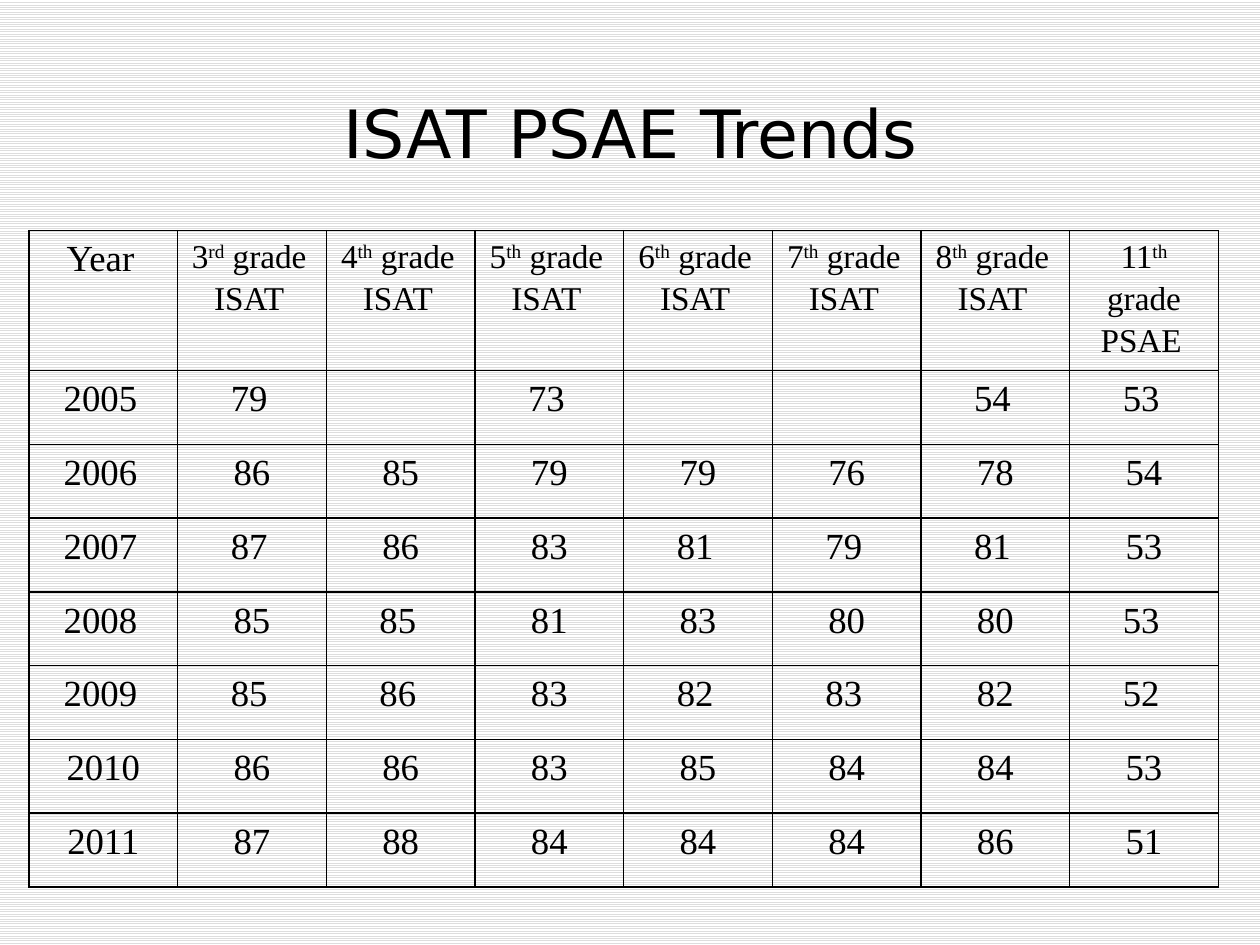
from lxml.etree import SubElement
from pptx import Presentation
from pptx.dml.color import RGBColor
from pptx.enum.dml import MSO_PATTERN
from pptx.enum.text import MSO_ANCHOR, PP_ALIGN
from pptx.oxml import parse_xml
from pptx.oxml.ns import nsdecls, qn
from pptx.util import Inches, Pt

BLACK = "000000"
SERIF = "Times New Roman"
HEADER_SHARE = 0.18
GRADES = [("3", "rd"), ("4", "th"), ("5", "th"), ("6", "th"), ("7", "th"), ("8", "th")]
SCORES = [
    ["2005 ", "79 ", "", "73 ", "", "", "54 ", "53 "],
    ["2006 ", "86", "85", "79", "79", "76", "78", "54"],
    ["2007 ", "87 ", "86", "83", "81 ", "79 ", "81 ", "53"],
    ["2008 ", "85", "85 ", "81", "83", "80", "80", "53 "],
    ["2009 ", "85 ", "86 ", "83", "82 ", "83 ", "82", "52 "],
    ["2010", "86", "86", "83", "85", "84", "84", "53"],
    ["2011", "87", "88", "84", "84", "84", "86", "51"],
]


def color(value):
    return RGBColor.from_string(value)


def style(para, font, size):
    para.alignment = PP_ALIGN.CENTER
    para.font.name = font
    para.font.size = Pt(size)
    para.font.color.rgb = color(BLACK)


def add_span(para, text, size, raised=False):
    span = para.add_run()
    span.text = text
    span.font.size = Pt(size)
    if raised:
        span._r.get_or_add_rPr().set("baseline", "30000")


def write_line(para, text, size, ordinal=None):
    style(para, SERIF, size)
    para.line_spacing = 1.15
    if ordinal:
        number, suffix = ordinal
        add_span(para, number, size)
        add_span(para, suffix, size, raised=True)
    if text:
        add_span(para, text.rstrip(), size)
    if text.endswith(" "):
        add_span(para, " ", 13)


def frame_cell(cell):
    cell.fill.background()
    cell.margin_left = cell.margin_right = Inches(0.08)
    cell.margin_top, cell.margin_bottom = Inches(0.02), 0
    properties = cell._tc.get_or_add_tcPr()
    for index, side in enumerate(("lnL", "lnR", "lnT", "lnB")):
        line = parse_xml(f'<a:{side} {nsdecls("a")} w="{Pt(1)}"/>')
        fill = SubElement(line, qn("a:solidFill"))
        SubElement(fill, qn("a:srgbClr")).set("val", BLACK)
        properties.insert(index, line)


def add_title(page, left, top, width, height):
    box = page.shapes.add_textbox(left, top, width, height)
    frame = box.text_frame
    frame.word_wrap = True
    frame.vertical_anchor = MSO_ANCHOR.BOTTOM
    para = frame.paragraphs[0]
    para.text = "ISAT PSAE Trends"
    style(para, "DejaVu Sans", 38)


def write_header(cells):
    write_line(cells[0].text_frame.paragraphs[0], "Year ", 21)
    for cell, grade in zip(cells[1:], GRADES):
        frame = cell.text_frame
        write_line(frame.paragraphs[0], " grade ", 19, grade)
        write_line(frame.add_paragraph(), "ISAT ", 19)
    write_line(cells[-1].text_frame.paragraphs[0], " grade PSAE ", 19, ("11", "th"))


def add_score_table(page, left, top, width, height):
    row_count, column_count = len(SCORES) + 1, len(SCORES[0])
    table = page.shapes.add_table(
        row_count, column_count, left, top, width, height
    ).table
    table.first_row = table.horz_banding = False
    header_height = int(height * HEADER_SHARE)
    for index, row in enumerate(table.rows):
        row.height = (height - header_height) // len(SCORES) if index else header_height
    for cell in table.iter_cells():
        frame_cell(cell)
    write_header(list(table.rows[0].cells))
    for row, scores in zip(list(table.rows)[1:], SCORES):
        for cell, score in zip(row.cells, scores):
            write_line(cell.text_frame.paragraphs[0], score, 21)


def main():
    deck = Presentation()
    deck.slide_width, deck.slide_height = Inches(10), Inches(7.5)
    page = deck.slides.add_slide(deck.slide_layouts[6])
    backdrop = page.background.fill
    backdrop.patterned()
    backdrop.pattern = MSO_PATTERN.LIGHT_HORIZONTAL
    backdrop.fore_color.rgb = color("DDDDDD")
    backdrop.back_color.rgb = color("FFFFFF")
    add_title(page, Inches(0.63), Inches(0.33), Inches(8.75), Inches(1.08))
    add_score_table(page, Inches(0.23), Inches(1.83), Inches(9.44), Inches(5))
    deck.save("out.pptx")


if __name__ == "__main__":
    main()
